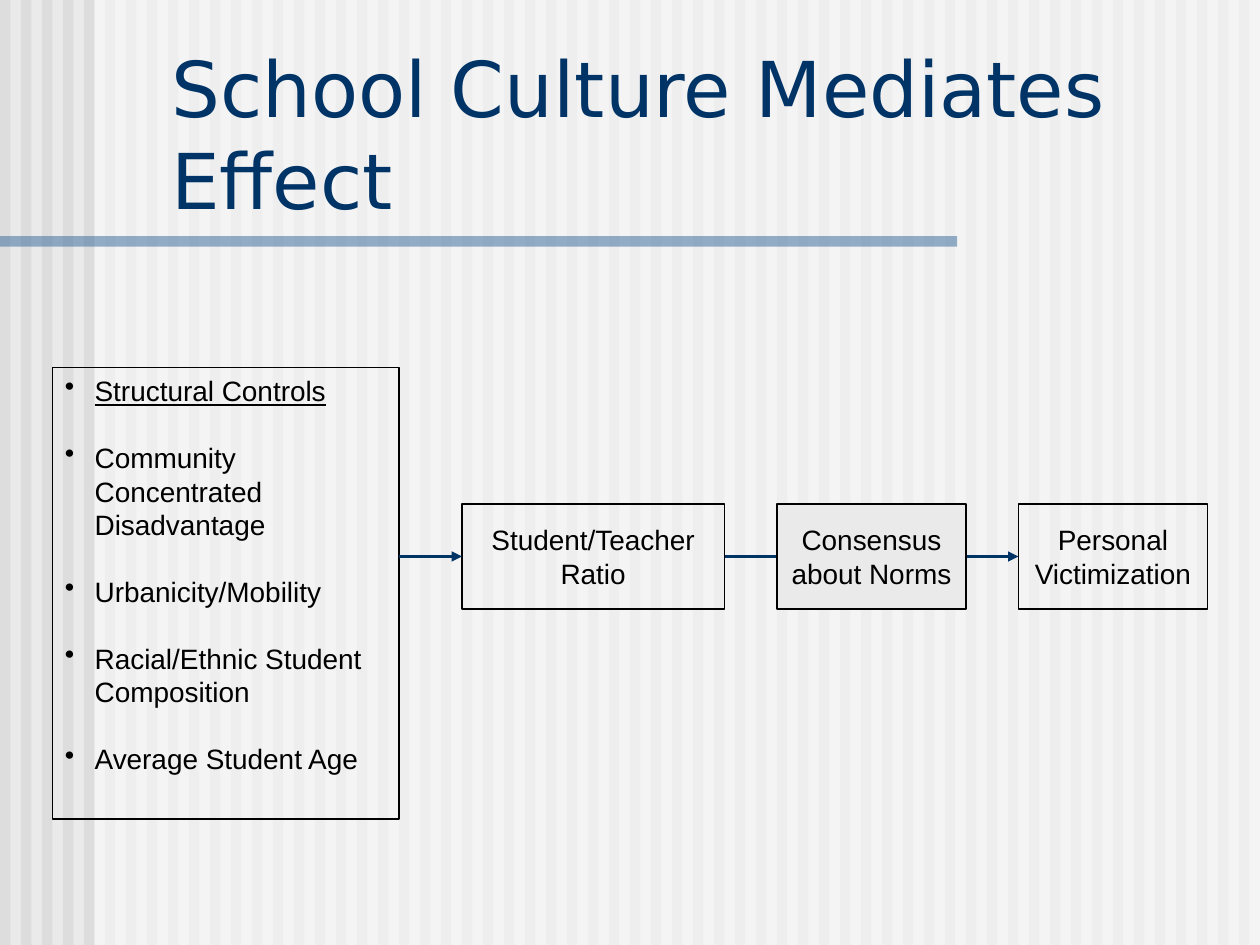
import lxml.etree
import pptx
import pptx.dml.color
import pptx.enum.shapes
import pptx.enum.text
import pptx.oxml.ns
import pptx.util

Pt = pptx.util.Pt
RGBColor = pptx.dml.color.RGBColor
Shapes = pptx.enum.shapes.MSO_SHAPE
Anchor = pptx.enum.text.MSO_ANCHOR
Align = pptx.enum.text.PP_ALIGN
qn = pptx.oxml.ns.qn

BLACK = RGBColor(0x00, 0x00, 0x00)
WHITE = RGBColor(0xFF, 0xFF, 0xFF)
NAVY = RGBColor(0x00, 0x33, 0x66)
BLUE = RGBColor(0x33, 0x66, 0x99)
LIGHT_GRAY = RGBColor(0xEA, 0xEA, 0xEA)
STRIPE_GRAY = RGBColor(0xDD, 0xDD, 0xDD)

WIDTH, HEIGHT = 720, 540
STRIPE = 6
BOX_TOP, BOX_HEIGHT = 288, 60
TOP, LEFT, BOTTOM, RIGHT = range(4)

CONTROLS = [
    "Structural Controls",
    "Community Concentrated Disadvantage",
    "Urbanicity/Mobility",
    "Racial/Ethnic Student Composition",
    "Average Student Age",
]


class SlideBuilder:
    title_font = "DejaVu Sans"
    body_font = "Arial"
    title_size = 44
    body_size = 16

    def __init__(self, slide):
        self.slide = slide

    def background(self, color):
        fill = self.slide.background.fill
        fill.solid()
        fill.fore_color.rgb = color

    def rectangle(self, left, top, width, height, fill=None, opacity=100):
        shape = self.slide.shapes.add_shape(
            Shapes.RECTANGLE, Pt(left), Pt(top), Pt(width), Pt(height))
        shape.shadow.inherit = False
        shape.line.fill.background()
        if fill is None:
            shape.fill.background()
            return shape
        shape.fill.solid()
        shape.fill.fore_color.rgb = fill
        if opacity < 100:
            color = shape.fill._xPr.find(qn("a:solidFill"))[0]
            alpha = lxml.etree.SubElement(color, qn("a:alpha"))
            alpha.set("val", str(opacity * 1000))
        return shape

    def set_text(self, paragraph, text, name, size, color, alignment):
        paragraph.text = text
        paragraph.alignment = alignment
        paragraph.font.name = name
        paragraph.font.size = Pt(size)
        paragraph.font.color.rgb = color

    def title(self, text, left, top, width, height):
        shape = self.slide.shapes.add_textbox(
            Pt(left), Pt(top), Pt(width), Pt(height))
        frame = shape.text_frame
        frame.word_wrap = True
        frame.vertical_anchor = Anchor.BOTTOM
        self.set_text(frame.paragraphs[0], text, self.title_font,
                      self.title_size, NAVY, Align.LEFT)

    def outlined_box(self, left, top, width, height, fill=None):
        shape = self.rectangle(left, top, width, height, fill)
        shape.line.color.rgb = BLACK
        shape.line.width = Pt(0.75)
        shape.text_frame.word_wrap = True
        return shape

    def box(self, text, left, width, fill=None):
        shape = self.outlined_box(left, BOX_TOP, width, BOX_HEIGHT, fill)
        frame = shape.text_frame
        frame.vertical_anchor = Anchor.MIDDLE
        self.set_text(frame.paragraphs[0], text, self.body_font,
                      self.body_size, BLACK, Align.CENTER)
        return shape

    def bullet_box(self, items, left, top, width, height):
        frame = self.outlined_box(left, top, width, height).text_frame
        frame.vertical_anchor = Anchor.TOP
        for index, item in enumerate(items):
            paragraph = frame.add_paragraph() if index else frame.paragraphs[0]
            self.set_text(paragraph, item, self.body_font,
                          self.body_size, BLACK, Align.LEFT)
            paragraph.space_before = Pt(19 if index else 0)
            paragraph.font.underline = index == 0
            properties = paragraph._p.get_or_add_pPr()
            properties.set("marL", str(Pt(17)))
            properties.set("indent", str(-Pt(17)))
            bullet = lxml.etree.Element(qn("a:buChar"), char="•")
            properties.find(qn("a:defRPr")).addprevious(bullet)

    def arrow(self, start, end, y, source=None, target=None):
        connector = self.slide.shapes.add_connector(
            pptx.enum.shapes.MSO_CONNECTOR.STRAIGHT,
            Pt(start), Pt(y), Pt(end), Pt(y))
        if source is not None:
            connector.begin_connect(source, RIGHT)
        if target is not None:
            connector.end_connect(target, LEFT)
        connector.line.color.rgb = NAVY
        connector.line.width = Pt(1.75)
        line = connector.line._get_or_add_ln()
        lxml.etree.SubElement(line, qn("a:tailEnd"), type="triangle")
        lxml.etree.SubElement(connector._element.spPr, qn("a:effectLst"))


def main():
    presentation = pptx.Presentation()
    presentation.slide_width = Pt(WIDTH)
    presentation.slide_height = Pt(HEIGHT)
    slide = presentation.slides.add_slide(presentation.slide_layouts[6])
    builder = SlideBuilder(slide)

    builder.background(LIGHT_GRAY)
    for left in range(0, WIDTH, 2 * STRIPE):
        builder.rectangle(left, 0, STRIPE, HEIGHT, STRIPE_GRAY)
    builder.rectangle(54, 0, WIDTH - 54, HEIGHT, WHITE, opacity=50)
    builder.rectangle(0, 135, 547, 6, BLUE, opacity=50)
    builder.title("School Culture Mediates Effect", 90.75, 18, 613.5, 114)

    builder.bullet_box(CONTROLS, 30, 210, 198, 258)
    ratio = builder.box("Student/Teacher Ratio", 264, 150)
    victimization = builder.box("Personal Victimization", 582, 108)
    middle = BOX_TOP + BOX_HEIGHT / 2
    builder.arrow(228, 264, middle, target=ratio)
    builder.arrow(414, 582, middle, source=ratio, target=victimization)
    builder.box("Consensus about Norms", 444, 108, LIGHT_GRAY)

    presentation.save("out.pptx")


if __name__ == "__main__":
    main()
